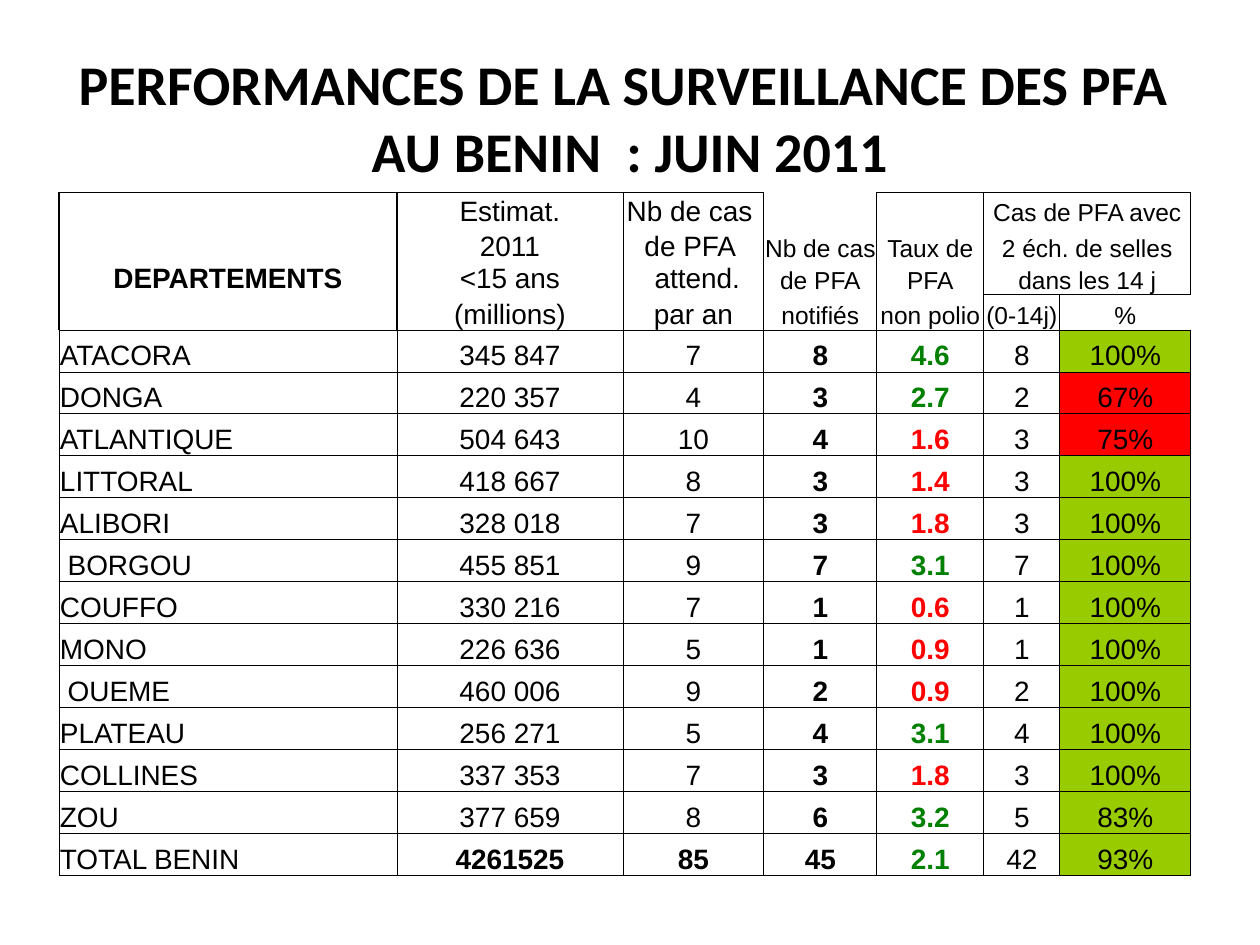
from lxml.etree import SubElement
from pptx import Presentation
from pptx.dml.color import RGBColor
from pptx.enum.text import MSO_ANCHOR, MSO_AUTO_SIZE, PP_ALIGN
from pptx.oxml.ns import qn
from pptx.util import Emu, Pt

SCALE = 914400 // 126
INK = {"black": "000000", "white": "FFFFFF", "red": "FF0000",
       "green": "008000", "lime": "99CC00"}
COLS = [338, 226, 141, 113, 107, 76, 131]
HEAD_H, ROW_H = 24, 42
HEAD = [
    ["", "Estimat.", "Nb de cas ", "", "", "Cas de PFA avec", ""],
    ["", "2011", "de PFA ", "Nb de cas", "Taux de", "2 éch. de selles", ""],
    ["DEPARTEMENTS", "<15 ans", " attend.", "de PFA", "PFA", "dans les 14 j", ""],
    ["", "(millions)", "par an", "notifiés", "non polio", "(0-14j)", "%"],
]
ROWS = [
    ["ATACORA", "345 847", "7", "8", "4.6", "8", "100%"],
    ["DONGA", "220 357", "4", "3", "2.7", "2", "67%"],
    ["ATLANTIQUE", "504 643", "10", "4", "1.6", "3", "75%"],
    ["LITTORAL", "418 667", "8", "3", "1.4", "3", "100%"],
    ["ALIBORI", "328 018", "7", "3", "1.8", "3", "100%"],
    [" BORGOU", "455 851", "9", "7", "3.1", "7", "100%"],
    ["COUFFO", "330 216", "7", "1", "0.6", "1", "100%"],
    ["MONO", "226 636", "5", "1", "0.9", "1", "100%"],
    [" OUEME", "460 006", "9", "2", "0.9", "2", "100%"],
    ["PLATEAU", "256 271", "5", "4", "3.1", "4", "100%"],
    ["COLLINES", "337 353", "7", "3", "1.8", "3", "100%"],
    ["ZOU", "377 659", "8", "6", "3.2", "5", "83%"],
    ["TOTAL BENIN", "4261525", "85", "45", "2.1", "42", "93%"],
]


def px(num):
    """Turn pixels into EMU."""
    return Emu(num * SCALE)


def rgb(name):
    """Look up a named colour."""
    return RGBColor.from_string(INK[name])


def write(frame, text, size=16, font="Arial", color="black", bold=False,
          align=PP_ALIGN.CENTER):
    """Put one formatted paragraph into a text frame."""
    para = frame.paragraphs[0]
    para.alignment = align
    if not text:
        para._p.get_or_add_endParaRPr().set("sz", str(size * 100))
        return
    run = para.add_run()
    run.text = text
    run.font.size, run.font.name, run.font.bold = Pt(size), font, bold
    run.font.color.rgb = rgb(color)


def edge(cell, sides):
    """Draw the cell sides given as letter and width; clear the others."""
    props = cell._tc.get_or_add_tcPr()
    for side in "LRTB":
        width = sides.get(side, 0)
        line = SubElement(props, qn(f"a:ln{side}"), w=str(Pt(width)))
        if width:
            fill = SubElement(line, qn("a:solidFill"))
            SubElement(fill, qn("a:srgbClr"), val=INK["black"])
        else:
            SubElement(line, qn("a:noFill"))


def setup(cell, sides, fill=None):
    """Set margins, anchor, borders and fill of a cell."""
    cell.margin_left = cell.margin_right = cell.margin_top = px(1)
    cell.margin_bottom = 0
    cell.vertical_anchor = MSO_ANCHOR.BOTTOM
    edge(cell, sides)
    if fill:
        cell.fill.solid()
        cell.fill.fore_color.rgb = rgb(fill)
    else:
        cell.fill.background()


def frame_of(row, col):
    """Give the border widths of a heading cell."""
    sides = {"L": 1 if col < 2 else 0.5, "R": 0.5 if col else 1}
    if row == 0 and col != 3 or row == 3 and col > 4:
        sides["T"] = 0.5
    if row == 3 or row == 2 and col > 4:
        sides["B"] = 0.5
    if (row, col) == (3, 6):
        del sides["R"]
    return sides


def heading(table):
    """Fill the four heading rows."""
    for row, texts in enumerate(HEAD):
        for col, text in enumerate(texts):
            cell = table.cell(row, col)
            setup(cell, frame_of(row, col))
            write(cell.text_frame, text, size=16 if col < 3 else 14, bold=col == 0)
        if row < 3:
            table.cell(row, 5).merge(table.cell(row, 6))


def body(table):
    """Fill the department rows, coloured by their targets."""
    grid = dict.fromkeys("LRTB", 0.5)
    for row, texts in enumerate(ROWS, len(HEAD)):
        total = texts is ROWS[-1]
        for col, text in enumerate(texts):
            cell = table.cell(row, col)
            fill, color = None, "black"
            if col == 4:
                color = "green" if float(text) >= 2 else "red"
            if col == 6:
                fill = "lime" if int(text[:-1]) >= 80 else "red"
            setup(cell, grid, fill)
            write(cell.text_frame, text, color=color,
                  bold=col in (3, 4) or total and col in (1, 2),
                  align=PP_ALIGN.CENTER if col else PP_ALIGN.LEFT)


def grid(slide, left, top):
    """Place the surveillance table."""
    high = [HEAD_H] * len(HEAD) + [ROW_H] * len(ROWS)
    table = slide.shapes.add_table(len(high), len(COLS), px(left), px(top),
                                   px(sum(COLS)), px(sum(high))).table
    table.first_row = table.horz_banding = False
    for col, wide in zip(table.columns, COLS):
        col.width = px(wide)
    for row, tall in zip(table.rows, high):
        row.height = px(tall)
    heading(table)
    body(table)


def title(slide, left, top, wide, high):
    """Place the slide title."""
    box = slide.shapes.title
    box.left, box.top, box.width, box.height = map(px, (left, top, wide, high))
    frame = box.text_frame
    frame.word_wrap = True
    frame.auto_size = MSO_AUTO_SIZE.NONE
    frame.vertical_anchor = MSO_ANCHOR.MIDDLE
    write(frame, "PERFORMANCES DE LA SURVEILLANCE DES PFA  AU BENIN  : JUIN 2011",
          size=32, font="Calibri", bold=True)


def main():
    """Build and save the slide."""
    deck = Presentation()
    deck.slide_width, deck.slide_height = px(1260), px(945)
    slide = deck.slides.add_slide(deck.slide_layouts[5])
    title(slide, 63, 38, 1134, 157)
    grid(slide, 59, 192)
    deck.save("out.pptx")


if __name__ == "__main__":
    main()
